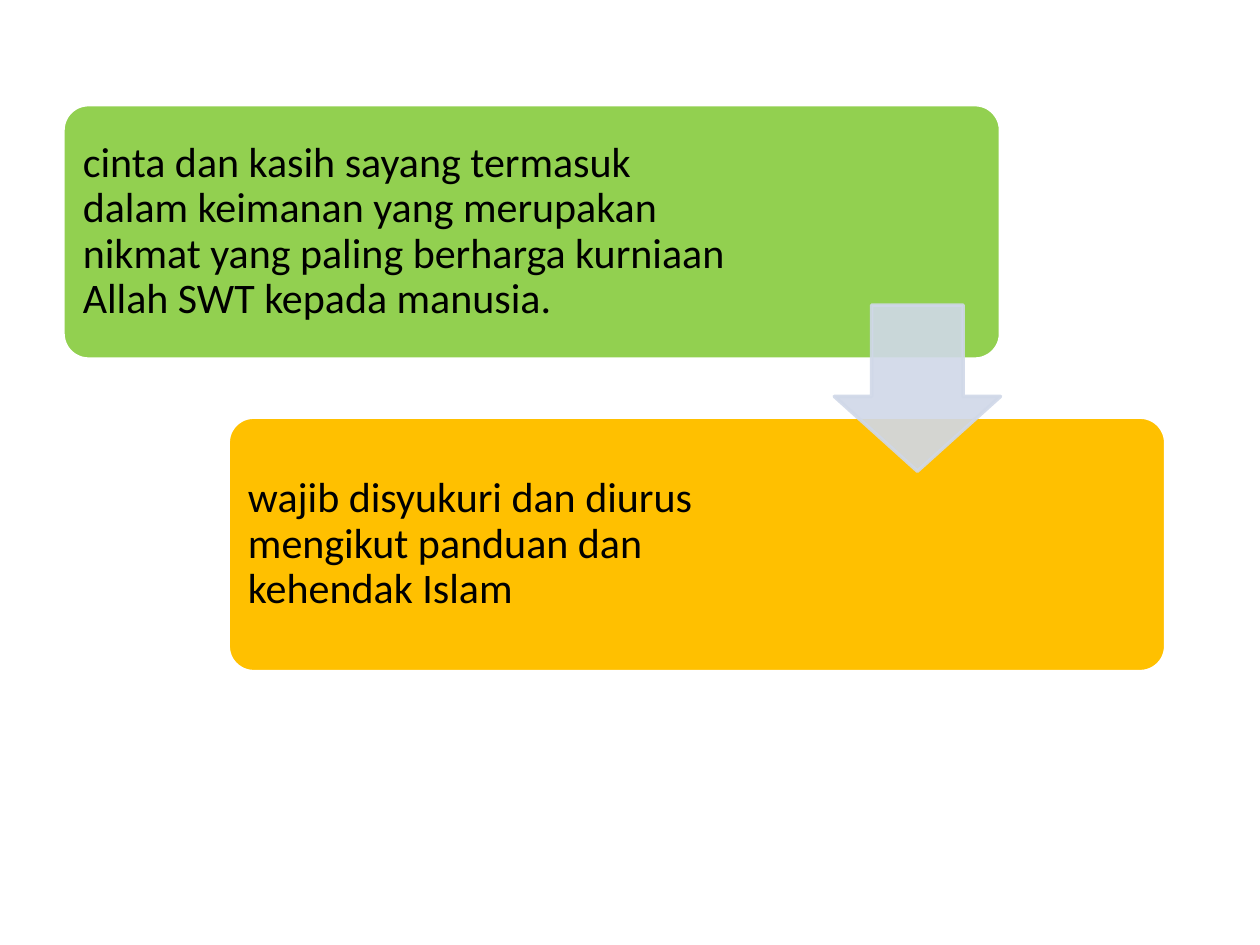
import pptx
import pptx.dml.color
import pptx.enum.shapes
import pptx.enum.text
import pptx.oxml.ns
import pptx.shapes.autoshape
import pptx.slide
import pptx.util
from dataclasses import dataclass
from lxml import etree

Cm = pptx.util.Cm
Pt = pptx.util.Pt
RGBColor = pptx.dml.color.RGBColor
Shape = pptx.shapes.autoshape.Shape
Slide = pptx.slide.Slide
Kind = pptx.enum.shapes.MSO_SHAPE

GREEN = RGBColor(0x92, 0xD0, 0x50)
AMBER = RGBColor(0xFF, 0xC0, 0x00)
PALE = RGBColor(0xD0, 0xD8, 0xE8)
WHITE = RGBColor(0xFF, 0xFF, 0xFF)
BLACK = RGBColor(0x00, 0x00, 0x00)

LEFT, TOP = 1.27, 2.11
WIDTH, HEIGHT = 18.9, 5.13
STEP_X, STEP_Y = 3.33, 6.3
INSET = 0.15
ARROW = 3.35


@dataclass
class Step:
    text: str
    fill: RGBColor
    width: float


STEPS = [
    Step("cinta dan kasih sayang termasuk dalam keimanan yang merupakan "
         "nikmat yang paling berharga kurniaan Allah SWT kepada manusia.",
         GREEN, 13.56),
    Step("wajib disyukuri dan diurus mengikut panduan dan kehendak Islam",
         AMBER, 11.91),
]


def paint(shape: Shape, fill: RGBColor, line: RGBColor) -> None:
    shape.shadow.inherit = False
    shape.fill.solid()
    shape.fill.fore_color.rgb = fill
    shape.line.color.rgb = line
    shape.line.width = Pt(2)


def add_step(slide: Slide, step: Step, left: float, top: float) -> None:
    card = slide.shapes.add_shape(
        Kind.ROUNDED_RECTANGLE, Cm(left), Cm(top), Cm(WIDTH), Cm(HEIGHT))
    card.adjustments[0] = 0.1
    paint(card, step.fill, WHITE)

    box = slide.shapes.add_textbox(
        Cm(left + INSET), Cm(top + INSET),
        Cm(step.width), Cm(HEIGHT - 2 * INSET))
    frame = box.text_frame
    frame.word_wrap = True
    frame.vertical_anchor = pptx.enum.text.MSO_ANCHOR.MIDDLE
    frame.margin_left = frame.margin_right = Cm(0.25)
    frame.margin_top = frame.margin_bottom = Cm(0.25)
    para = frame.paragraphs[0]
    para.text = step.text
    para.line_spacing = 0.9
    para.font.name = "Calibri"
    para.font.size = Pt(24)
    para.font.color.rgb = BLACK


def add_arrow(slide: Slide, left: float, top: float) -> None:
    arrow = slide.shapes.add_shape(
        Kind.DOWN_ARROW, Cm(left), Cm(top), Cm(ARROW), Cm(ARROW))
    arrow.adjustments[0] = 0.55
    arrow.adjustments[1] = 0.45
    paint(arrow, PALE, PALE)
    qn = pptx.oxml.ns.qn
    for color in arrow.element.spPr.iter(qn("a:srgbClr")):
        etree.SubElement(color, qn("a:alpha"), val="90000")


def main() -> None:
    deck = pptx.Presentation()
    deck.slide_width, deck.slide_height = Cm(25.4), Cm(19.05)
    slide = deck.slides.add_slide(deck.slide_layouts[6])
    for i, step in enumerate(STEPS):
        add_step(slide, step, LEFT + i * STEP_X, TOP + i * STEP_Y)
    middle = TOP + (HEIGHT + STEP_Y) / 2
    add_arrow(slide, LEFT + WIDTH - ARROW, middle - ARROW / 2)
    deck.save("out.pptx")


if __name__ == "__main__":
    main()
